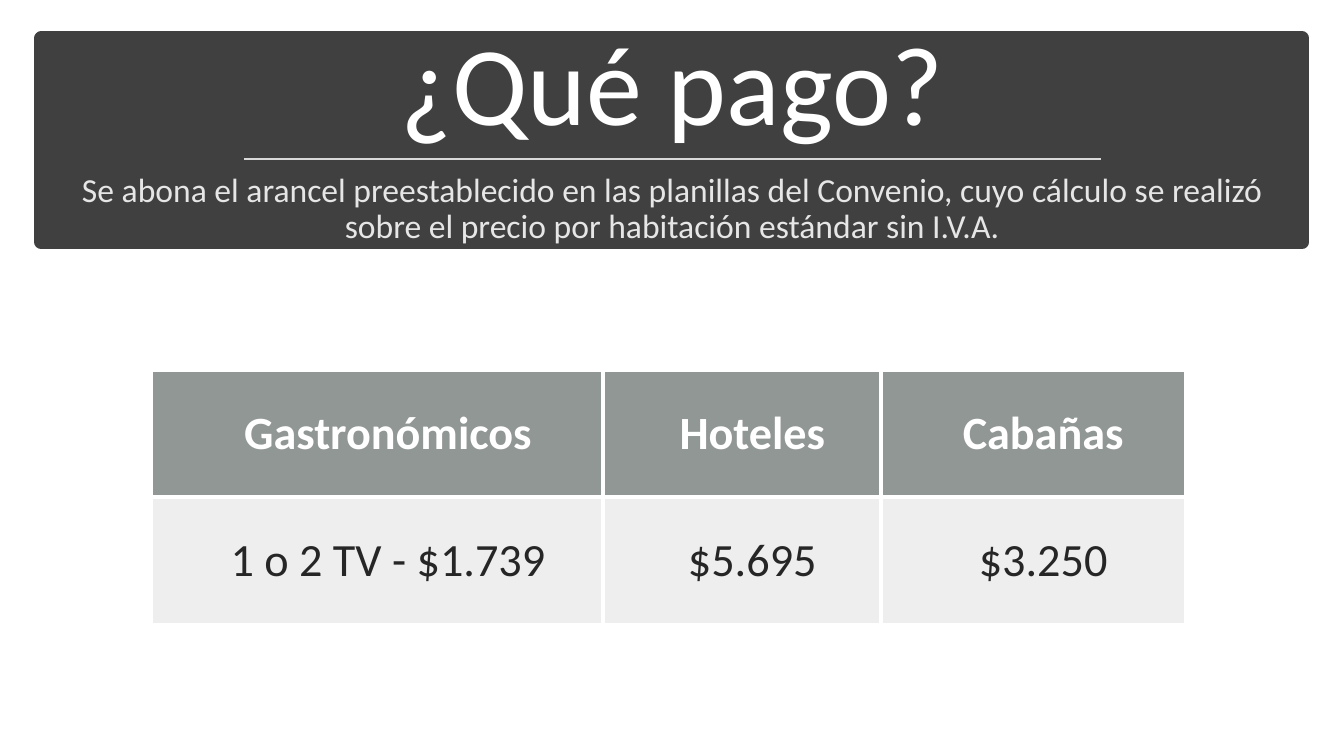
"""Builds the fee slide: a dark title banner above a table of prices."""
from lxml import etree
from pptx import Presentation
from pptx.dml.color import RGBColor
from pptx.enum.shapes import MSO_CONNECTOR, MSO_SHAPE
from pptx.enum.text import MSO_ANCHOR, MSO_AUTO_SIZE, PP_ALIGN
from pptx.oxml.ns import qn
from pptx.util import Cm, Pt

RECT, STRAIGHT = MSO_SHAPE.RECTANGLE, MSO_CONNECTOR.STRAIGHT
CENTER, NO_FIT = PP_ALIGN.CENTER, MSO_AUTO_SIZE.NONE
TOP, MIDDLE, BOTTOM = MSO_ANCHOR.TOP, MSO_ANCHOR.MIDDLE, MSO_ANCHOR.BOTTOM
WHITE = RGBColor(0xFF, 0xFF, 0xFF)
DARK = RGBColor(0x40, 0x40, 0x40)
LIGHT = RGBColor(0xE7, 0xE6, 0xE6)
RULE = RGBColor(0xD9, 0xD9, 0xD9)
INK = RGBColor(0x26, 0x26, 0x26)
HEADER = RGBColor(0x63, 0x6B, 0x68)
BODY = RGBColor(0x87, 0x8E, 0x8B)


def write(tf, text, size, color, bold=False, spacing=1.0, before=0):
    p = tf.paragraphs[0]
    p.alignment = CENTER
    p.line_spacing = spacing
    p.space_before = Pt(before)
    r = p.add_run()
    r.text = text
    r.font.name = "Calibri"
    r.font.size = Pt(size)
    r.font.bold = bold
    r.font.color.rgb = color


def add_border(tc_pr, side):
    ln = etree.SubElement(tc_pr, qn("a:" + side), w=str(Pt(3)))
    fill = etree.SubElement(ln, qn("a:solidFill"))
    etree.SubElement(fill, qn("a:srgbClr"), val=str(WHITE))


prs = Presentation()
prs.slide_width, prs.slide_height = Cm(33.87), Cm(19.05)
s = prs.slides.add_slide(prs.slide_layouts[0])

banner = s.shapes.add_shape(RECT, Cm(1.04), Cm(0.97), Cm(31.78), Cm(5.13))
banner.shadow.inherit = False
banner.fill.solid()
banner.fill.fore_color.rgb = DARK
banner.line.color.rgb = DARK
banner.line.width = Pt(10)
s.shapes._spTree.insert(2, banner._element)

title, subtitle = s.shapes.title, s.placeholders[1]
for sp, top, height, anchor in ((title, 1.3, 2.59, BOTTOM), (subtitle, 4.24, 1.17, TOP)):
    sp.left, sp.top, sp.width, sp.height = Cm(1.47), Cm(top), Cm(30.94), Cm(height)
    sp.text_frame.word_wrap = True
    sp.text_frame.auto_size = NO_FIT
    sp.text_frame.vertical_anchor = anchor
write(title.text_frame, "¿Qué pago?", 80, WHITE, spacing=0.9)
write(subtitle.text_frame,
      "Se abona el arancel preestablecido en las planillas del Convenio, "
      "cuyo cálculo se realizó sobre el precio por habitación estándar sin I.V.A.",
      24, LIGHT, spacing=0.9, before=10)

rule = s.shapes.add_connector(STRAIGHT, Cm(6.15), Cm(4.01), Cm(27.74), Cm(4.01))
rule.line.color.rgb = RULE
rule.line.width = Pt(1.75)
etree.SubElement(rule._element.spPr, qn("a:effectLst"))

rows = (("Gastronómicos", "Hoteles", "Cabañas"),
        ("1 o 2 TV - $1.739", "$5.695", "$3.250"))
formats = ((HEADER, 70, WHITE, True), (BODY, 15, INK, False))
widths = (11.35, 7.01, 7.65)
row_height = 3.18
table = s.shapes.add_table(len(rows), len(widths), Cm(3.84), Cm(9.35),
                           Cm(sum(widths)), Cm(row_height * len(rows))).table
for column, width in zip(table.columns, widths):
    column.width = Cm(width)
for i, (row, (fill, opacity, color, bold)) in enumerate(zip(rows, formats)):
    table.rows[i].height = Cm(row_height)
    for j, text in enumerate(row):
        cell = table.cell(i, j)
        cell.vertical_anchor = MIDDLE
        cell.margin_left = Cm(1.32)
        cell.margin_right = cell.margin_top = cell.margin_bottom = Cm(0.79)
        write(cell.text_frame, text, 33, color, bold=bold)
        tc_pr = cell._tc.get_or_add_tcPr()
        inner = (("lnL", j > 0), ("lnR", j < len(widths) - 1),
                 ("lnT", i > 0), ("lnB", i < len(rows) - 1))
        for side, shown in inner:
            if shown:
                add_border(tc_pr, side)
        cell.fill.solid()
        cell.fill.fore_color.rgb = fill
        tint = tc_pr.find(qn("a:solidFill")).find(qn("a:srgbClr"))
        etree.SubElement(tint, qn("a:alpha"), val=str(opacity * 1000))

prs.save("out.pptx")
